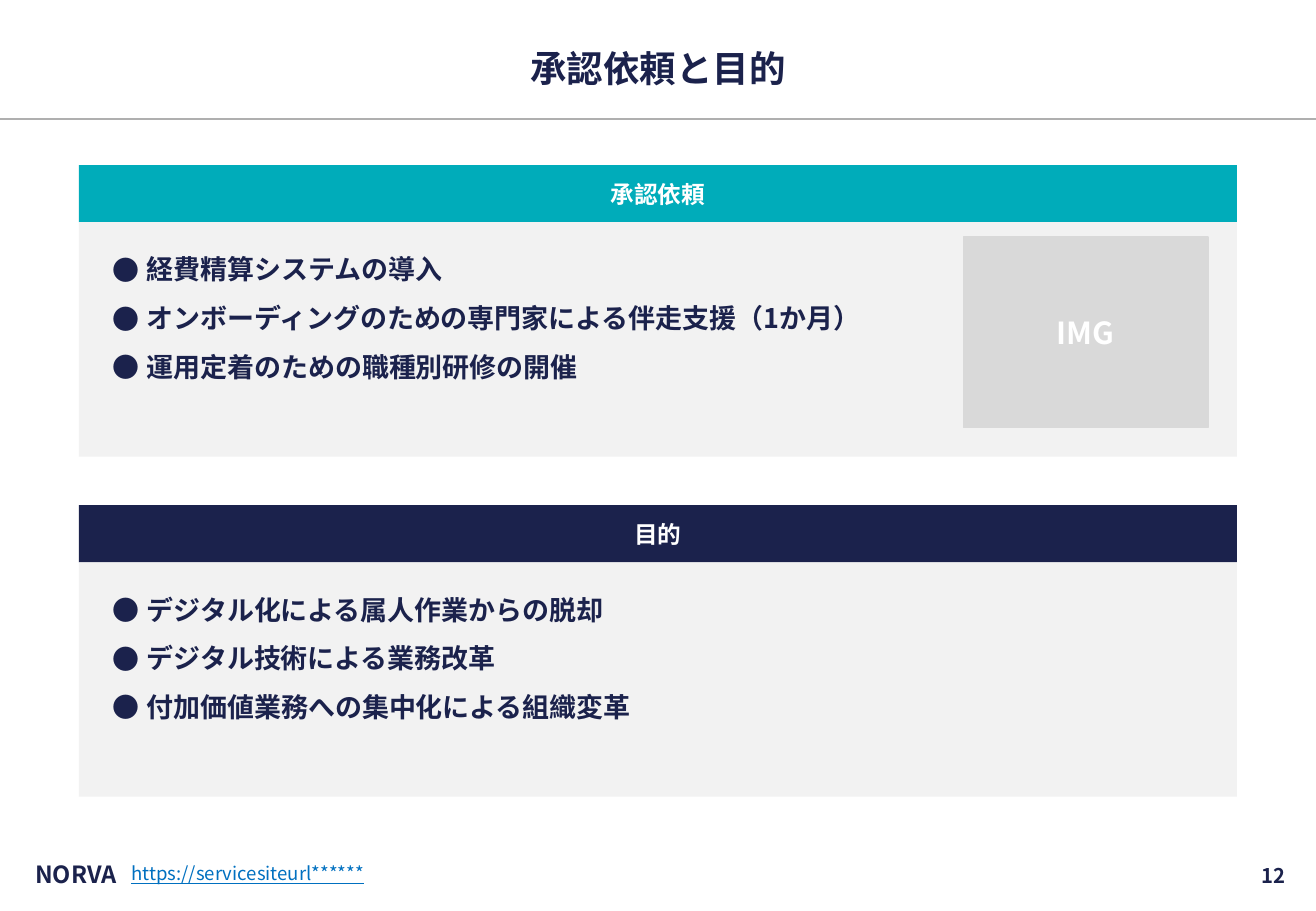
from lxml.etree import SubElement
from pptx import Presentation
from pptx.dml.color import RGBColor
from pptx.enum.shapes import MSO_CONNECTOR, MSO_SHAPE
from pptx.enum.text import MSO_ANCHOR as ANCHOR, PP_ALIGN as ALIGN
from pptx.oxml.ns import qn
from pptx.util import Pt

FONT = "Noto Sans CJK JP"
NAVY = RGBColor(0x1B, 0x22, 0x4C)
TEAL = RGBColor(0x00, 0xAC, 0xBA)
WHITE = RGBColor(0xFF, 0xFF, 0xFF)
PANEL_GRAY = RGBColor(0xF2, 0xF2, 0xF2)
IMAGE_GRAY = RGBColor(0xD9, 0xD9, 0xD9)
RULE_GRAY = RGBColor(0xAF, 0xAF, 0xAF)
LINK_BLUE = RGBColor(0x00, 0x70, 0xC0)

SLIDE_W, SLIDE_H = 779.76, 540
MARGIN = 46.8
CONTENT_W = SLIDE_W - 2 * MARGIN
HEADER_H, BODY_H, PANEL_GAP = 33.84, 138.96, 28.8
PANEL_TOP = 97.92


def write(sp, text, size, color, bold=True, align=ALIGN.LEFT,
          anchor=ANCHOR.MIDDLE, insets=(7.2, 3.6, 7.2, 3.6)):
    """Fill a shape with text, one paragraph per line, and format it."""
    tf = sp.text_frame
    tf.text = text
    tf.word_wrap = True
    tf.vertical_anchor = anchor
    tf.margin_left, tf.margin_top, tf.margin_right, tf.margin_bottom = map(Pt, insets)
    for p in tf.paragraphs:
        p.alignment = align
        for r in p.runs:
            r.font.name = FONT
            r.font.size = Pt(size)
            r.font.bold = bold
            r.font.color.rgb = color
            SubElement(r.font._element, qn("a:ea"), typeface=FONT)
    return tf


def add_text(s, box, text, size, color, **options):
    sp = s.shapes.add_textbox(*map(Pt, box))
    return write(sp, text, size, color, **options)


def add_rect(s, box, fill):
    sp = s.shapes.add_shape(MSO_SHAPE.RECTANGLE, *map(Pt, box))
    sp.shadow.inherit = False
    sp.fill.solid()
    sp.fill.fore_color.rgb = fill
    sp.line.fill.background()
    return sp


def add_bullet(p, indent):
    pPr = p._p.get_or_add_pPr()
    pPr.set("marL", str(Pt(indent)))
    pPr.set("indent", str(-Pt(indent)))
    color = SubElement(pPr, qn("a:buClr"))
    SubElement(color, qn("a:srgbClr"), val=str(NAVY))
    SubElement(pPr, qn("a:buFont"), typeface=FONT)
    SubElement(pPr, qn("a:buChar"), char="●")


def title_area(s, x, y, w, h, text):
    """Centred title over a full-width rule at the bottom of the box."""
    rule = s.shapes.add_connector(MSO_CONNECTOR.STRAIGHT, Pt(x), Pt(y + h), Pt(x + w), Pt(y + h))
    rule.line.color.rgb = RULE_GRAY
    rule.line.width = Pt(0.75)
    SubElement(rule._element.spPr, qn("a:effectLst"))
    tf = add_text(s, (x + MARGIN, y + 28.08, w - 2 * MARGIN, 28.08), text, 21.6, NAVY,
                  align=ALIGN.CENTER, insets=(2.88,) * 4)
    tf.paragraphs[0].line_spacing = 0.9


def panel(s, x, y, w, heading, color, items):
    """Coloured heading bar with a bulleted body below it."""
    header = add_rect(s, (x, y, w, HEADER_H), color)
    write(header, heading, 14, WHITE, align=ALIGN.CENTER)
    body = add_rect(s, (x, y + HEADER_H, w, BODY_H), PANEL_GRAY)
    tf = write(body, "\n".join(items), 16, NAVY, anchor=ANCHOR.TOP,
               insets=(20.16, 8.64, 14.4, 8.64))
    for p in tf.paragraphs:
        p.line_spacing = 1.5
        add_bullet(p, 20.16)


def image_slot(s, x, y, w, h):
    sp = add_rect(s, (x, y, w, h), IMAGE_GRAY)
    sp.line.color.rgb = IMAGE_GRAY
    sp.line.width = Pt(1)
    write(sp, "IMG", 18, WHITE, align=ALIGN.CENTER)


def footer(s, x, y, w, h, company, url, number):
    add_text(s, (x + 18, y, 56.16, h), company, 14, NAVY, insets=(2.88,) * 4)
    tf = add_text(s, (x + 74.88, y + 4.32, 414, 18.72), url, 11, LINK_BLUE, bold=False,
                  anchor=ANCHOR.TOP, insets=(2.88,) * 4)
    tf.paragraphs[0].runs[0].font.underline = True
    add_text(s, (x + w - 186.48, y + 0.72, 175.68, h), number, 12, NAVY, align=ALIGN.RIGHT)


def main():
    prs = Presentation()
    prs.slide_width, prs.slide_height = Pt(SLIDE_W), Pt(SLIDE_H)
    s = prs.slides.add_slide(prs.slide_layouts[6])

    title_area(s, 0, 0, SLIDE_W, 70.56, "承認依頼と目的")
    panels = [
        ("承認依頼", TEAL, ["経費精算システムの導入",
                        "オンボーディングのための専門家による伴走支援（1か月）",
                        "運用定着のための職種別研修の開催"]),
        ("目的", NAVY, ["デジタル化による属人作業からの脱却",
                      "デジタル技術による業務改革",
                      "付加価値業務への集中化による組織変革"]),
    ]
    for i, (heading, color, items) in enumerate(panels):
        y = PANEL_TOP + i * (HEADER_H + BODY_H + PANEL_GAP)
        panel(s, MARGIN, y, CONTENT_W, heading, color, items)
    image_slot(s, 570.96, PANEL_TOP + HEADER_H + 8.64, 144.72, 113.04)
    footer(s, 0, 504, SLIDE_W, 28.08, "NORVA", "https://servicesiteurl******", "12")

    prs.save("out.pptx")


if __name__ == "__main__":
    main()
